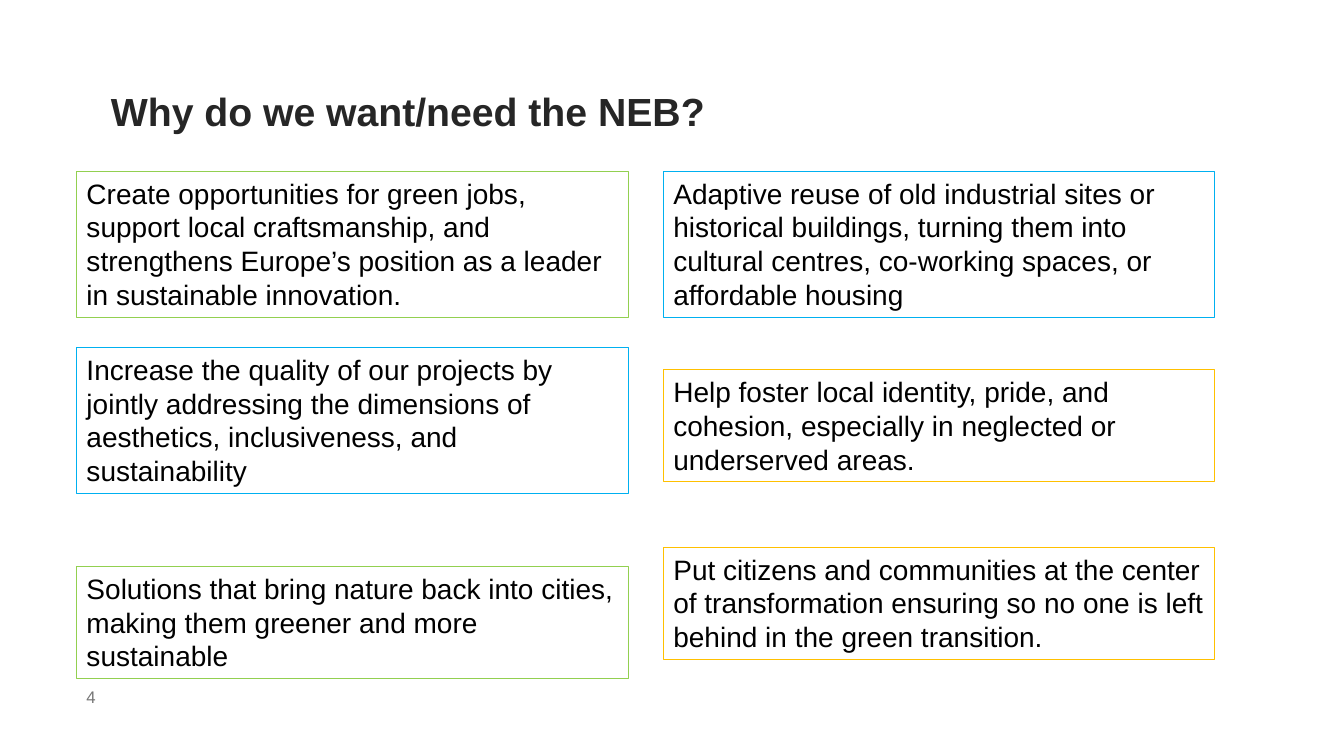
from pptx import Presentation, util as u
from pptx.dml.color import RGBColor
from pptx.enum import shapes, text

PX = 9144
THEME = {
    "font": "Arial", "ink": "000000", "head": "262626", "page": "767676",
    "green": "92D050", "blue": "00B0F0", "gold": "FFC000",
    "title": 28, "body": 20, "small": 12, "line": 0.75,
}


def place(shape, left, top, width, height):
    spot = {"left": left, "top": top, "width": width, "height": height}
    for name, value in spot.items():
        setattr(shape, name, u.Emu(value * PX))


def write(shape, words, size, color, bold=False,
          anchor=text.MSO_ANCHOR.TOP, fit=text.MSO_AUTO_SIZE.SHAPE_TO_FIT_TEXT):
    frame = shape.text_frame
    frame.text = words
    look = {"word_wrap": True, "auto_size": fit, "vertical_anchor": anchor}
    for name, value in look.items():
        setattr(frame, name, value)
    para = frame.paragraphs[0]
    para.alignment = text.PP_ALIGN.LEFT
    font = para.runs[0].font
    style = {"name": THEME["font"], "size": u.Pt(THEME[size]), "bold": bold}
    for name, value in style.items():
        setattr(font, name, value)
    font.color.rgb = RGBColor.from_string(THEME[color])


deck = Presentation()
deck.slide_width = u.Emu(1333 * PX)
deck.slide_height = u.Emu(750 * PX)
slide = deck.slides.add_slide(deck.slide_layouts[5])

title = slide.shapes.title
place(title, 100, 82, 1117, 57)
write(title, "Why do we want/need the NEB?", "title", "head", bold=True)
title.text_frame.paragraphs[0].space_after = u.Pt(6)

LEFT, RIGHT, WIDTH = 76, 658, 547
TALL, SHORT = 145, 111
cards = [
    (LEFT, 170, TALL, "green", "Create opportunities for green jobs, support local craftsmanship, "
     "and strengthens Europe’s position as a leader in sustainable innovation."),
    (LEFT, 345, TALL, "blue", "Increase the quality of our projects by jointly addressing "
     "the dimensions of aesthetics, inclusiveness, and sustainability"),
    (LEFT, 562, SHORT, "green", "Solutions that bring nature back into cities, "
     "making them greener and more sustainable"),
    (RIGHT, 170, TALL, "blue", "Adaptive reuse of old industrial sites or historical buildings, "
     "turning them into cultural centres, co-working spaces, or affordable housing"),
    (RIGHT, 367, SHORT, "gold", "Help foster local identity, pride, and cohesion, "
     "especially in neglected or underserved areas."),
    (RIGHT, 543, SHORT, "gold", "Put citizens and communities at the center of transformation "
     "ensuring so no one is left behind in the green transition."),
]
for left, top, height, edge, words in cards:
    card = slide.shapes.add_shape(shapes.MSO_SHAPE.RECTANGLE, 0, 0, 0, 0)
    place(card, left, top, WIDTH, height)
    card.shadow.inherit = False
    card.fill.background()
    card.line.color.rgb = RGBColor.from_string(THEME[edge])
    card.line.width = u.Pt(THEME["line"])
    write(card, words, "body", "ink")

page = slide.shapes.add_textbox(0, 0, 0, 0)
place(page, LEFT, 671, 300, 40)
write(page, "4", "small", "page", anchor=text.MSO_ANCHOR.MIDDLE, fit=text.MSO_AUTO_SIZE.NONE)

deck.save("out.pptx")
